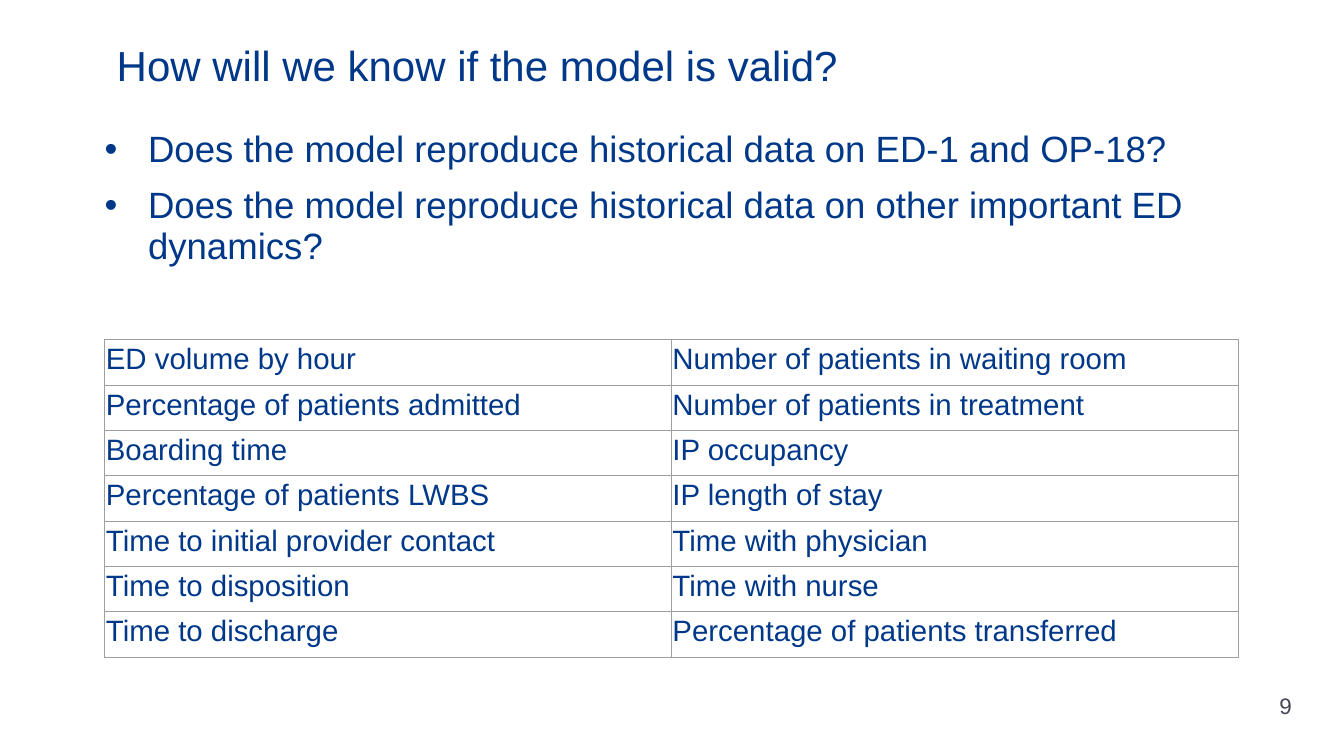
from dataclasses import dataclass

from lxml import etree
from pptx import Presentation
from pptx.dml.color import RGBColor
from pptx.enum.text import MSO_ANCHOR
from pptx.oxml.ns import qn
from pptx.util import Inches, Pt

TOP, MIDDLE, BOTTOM = MSO_ANCHOR.TOP, MSO_ANCHOR.MIDDLE, MSO_ANCHOR.BOTTOM


@dataclass(frozen=True)
class Theme:
    font: str = "Arial"
    ink: str = "003889"
    number_ink: str = "464653"
    rule: str = "9E9E9E"
    title_size: float = 30
    body_size: float = 26.1
    table_size: float = 21
    number_size: float = 16
    rule_width: float = 0.75
    line_spacing: float = 0.94
    paragraph_gap: float = 10


THEME = Theme()

TITLE = "How will we know if the model is valid?"
QUESTIONS = [
    "Does the model reproduce historical data on ED-1 and OP-18?",
    "Does the model reproduce historical data on other important ED dynamics?",
]
MEASURES = [
    ("ED volume by hour", "Number of patients in waiting room"),
    ("Percentage of patients admitted", "Number of patients in treatment"),
    ("Boarding time", "IP occupancy"),
    ("Percentage of patients LWBS", "IP length of stay"),
    ("Time to initial provider contact", "Time with physician"),
    ("Time to disposition", "Time with nurse"),
    ("Time to discharge", "Percentage of patients transferred"),
]


def style_font(para, size, color):
    para.font.name = THEME.font
    para.font.size = Pt(size)
    para.font.color.rgb = RGBColor.from_string(color)


def add_text(page, box, text, size, color, anchor=TOP):
    """Place a wrapping text box and return its text frame."""
    frame = page.shapes.add_textbox(*map(Inches, box)).text_frame
    frame.word_wrap = True
    frame.vertical_anchor = anchor
    frame.text = text
    for para in frame.paragraphs:
        style_font(para, size, color)
    return frame


def add_bullet(para, indent, hanging):
    properties = para._p.get_or_add_pPr()
    properties.set("marL", str(Inches(indent)))
    properties.set("indent", str(-Inches(hanging)))
    color = etree.SubElement(properties, qn("a:buClr"))
    etree.SubElement(color, qn("a:srgbClr"), val=THEME.ink)
    etree.SubElement(properties, qn("a:buFont"), typeface=THEME.font)
    etree.SubElement(properties, qn("a:buChar"), char="•")


def add_title(page, box):
    frame = add_text(page, box, TITLE, THEME.title_size, THEME.ink)
    frame.paragraphs[0].line_spacing = THEME.line_spacing


def add_questions(page, box):
    frame = page.shapes.add_textbox(*map(Inches, box)).text_frame
    frame.word_wrap = True
    frame.text = "\n".join(QUESTIONS)
    for index, para in enumerate(frame.paragraphs):
        add_bullet(para, 0.5, 0.43)
        para.line_spacing = THEME.line_spacing
        if index:
            para.space_before = Pt(THEME.paragraph_gap)
        style_font(para, THEME.body_size, THEME.ink)


def add_borders(cell):
    properties = cell._tc.get_or_add_tcPr()
    for index, side in enumerate(("a:lnL", "a:lnR", "a:lnT", "a:lnB")):
        line = etree.Element(qn(side), w=str(Pt(THEME.rule_width)))
        fill = etree.SubElement(line, qn("a:solidFill"))
        etree.SubElement(fill, qn("a:srgbClr"), val=THEME.rule)
        properties.insert(index, line)


def add_measures(page, box):
    left, top, width, height = map(Inches, box)
    rows, columns = len(MEASURES), len(MEASURES[0])
    table = page.shapes.add_table(rows, columns, left, top, width, height).table
    table.first_row = table.horz_banding = False
    for row, texts in enumerate(MEASURES):
        for column, text in enumerate(texts):
            cell = table.cell(row, column)
            cell.text = text
            cell.fill.background()
            cell.vertical_anchor = BOTTOM
            cell.margin_left = cell.margin_right = cell.margin_top = Inches(0.01)
            cell.margin_bottom = Inches(0.09)
            style_font(cell.text_frame.paragraphs[0], THEME.table_size, THEME.ink)
            add_borders(cell)


def add_page_number(page, box):
    add_text(page, box, "9", THEME.number_size, THEME.number_ink, MIDDLE)


def main():
    deck = Presentation()
    deck.slide_width, deck.slide_height = Inches(13.33), Inches(7.5)
    page = deck.slides.add_slide(deck.slide_layouts[6])

    # Heading and questions
    add_title(page, (1.06, 0.38, 11.5, 0.96))
    add_questions(page, (0.87, 1.24, 11.88, 5.75))

    # Validation measures
    add_measures(page, (1.04, 3.37, 11.24, 3.04))

    # Footer
    add_page_number(page, (12.59, 6.8, 0.63, 0.4))

    deck.save("out.pptx")


if __name__ == "__main__":
    main()
